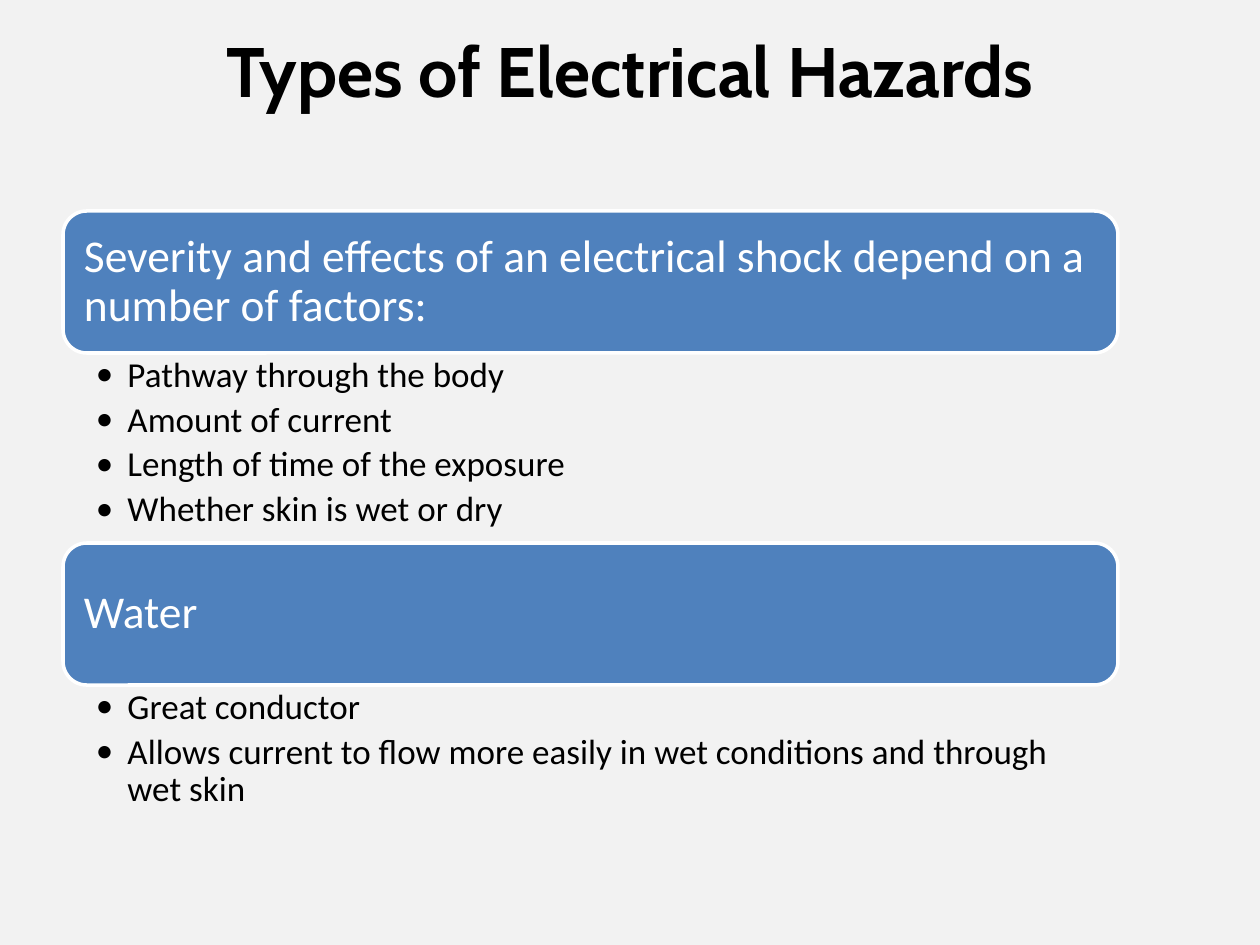
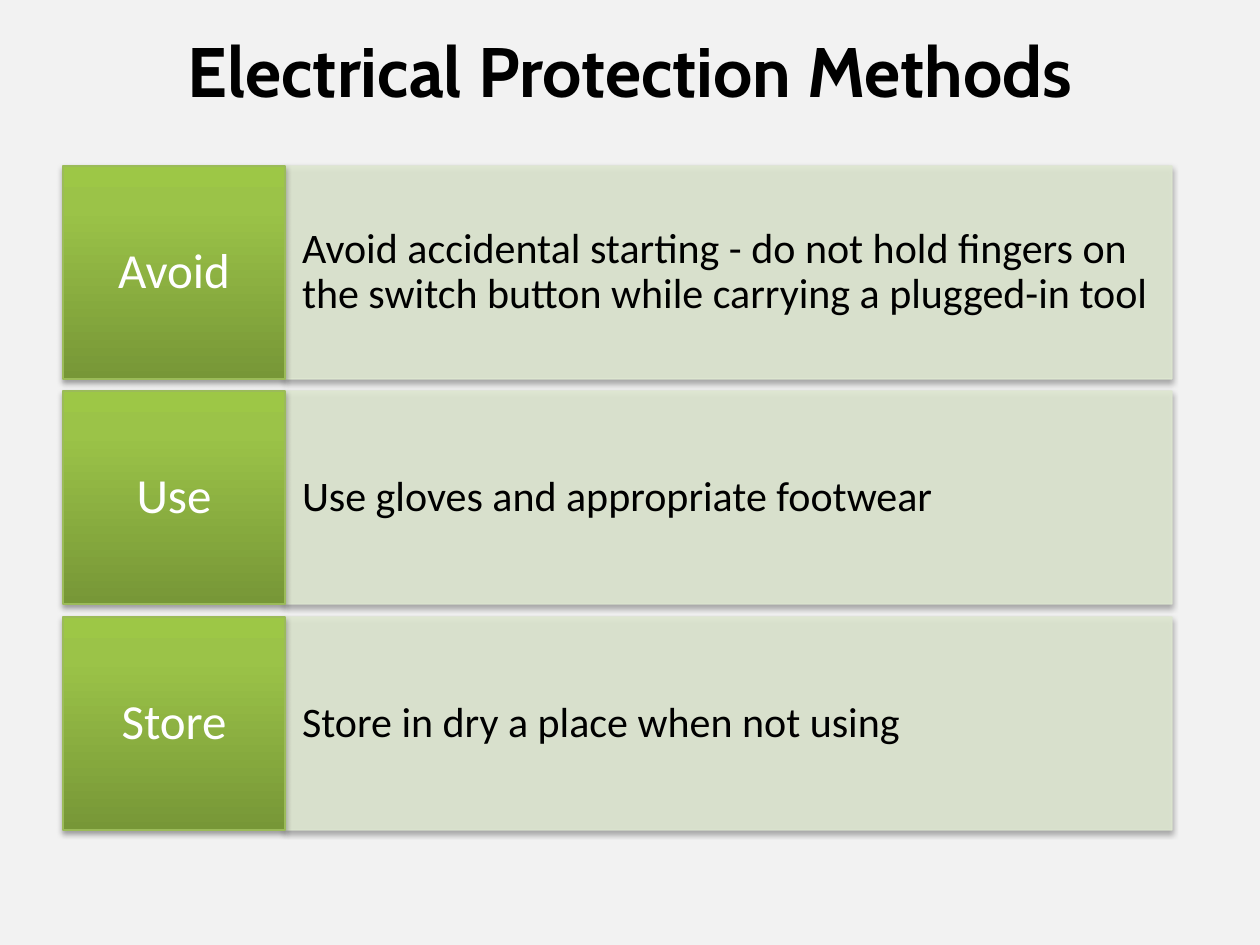
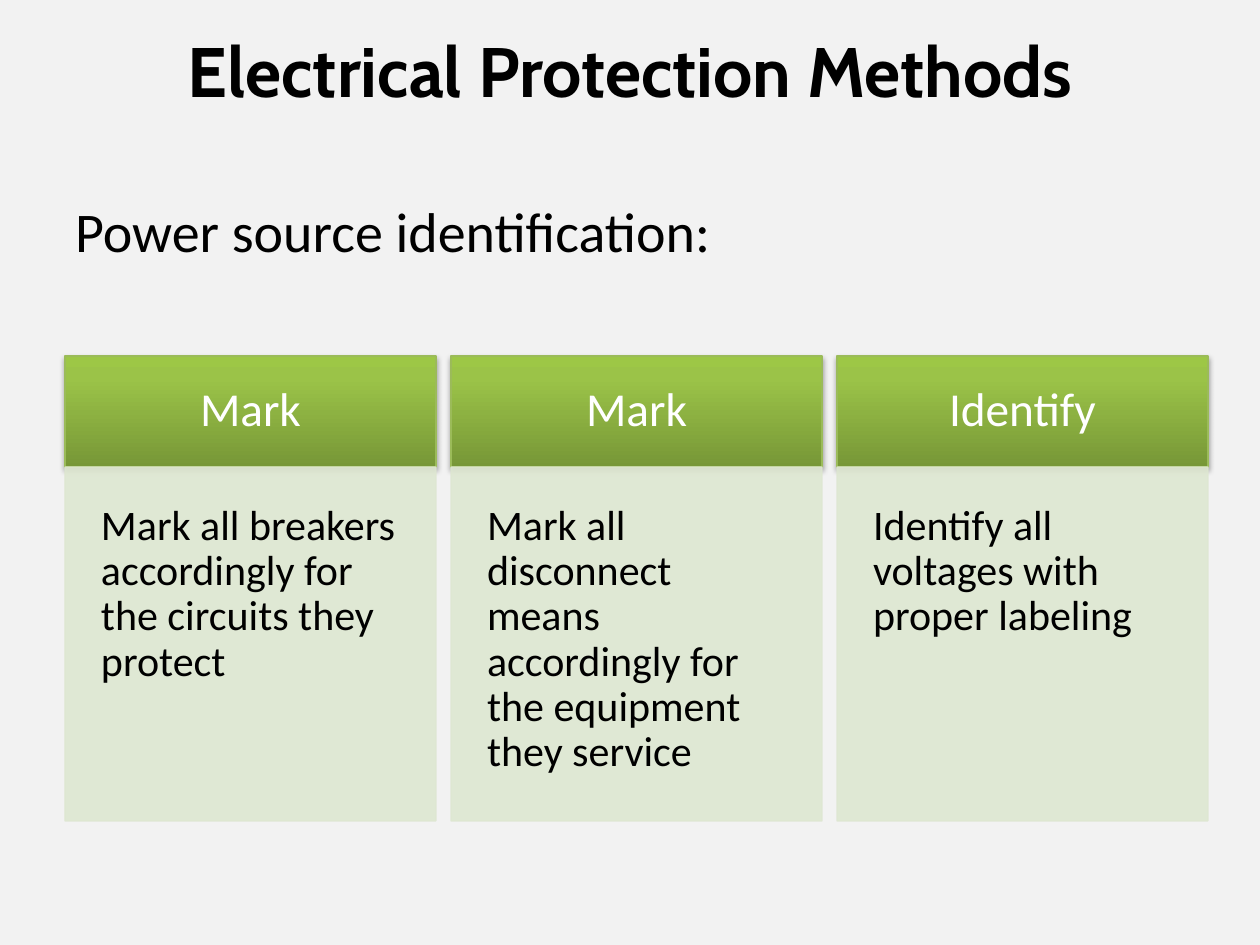
from copy import deepcopy

from lxml.etree import SubElement
from pptx import Presentation
from pptx.dml.color import RGBColor
from pptx.enum.shapes import MSO_SHAPE
from pptx.enum.text import MSO_ANCHOR, PP_ALIGN
from pptx.oxml.ns import qn
from pptx.util import Emu, Pt

PX = 914400 / 126
BLACK, WHITE, BACKGROUND = "000000", "FFFFFF", "F2F2F2"
BLUE, GREEN_EDGE, PALE_GREEN = "4F81BD", "9BBB59", "DEE7D1"
GREEN_STOPS = [(0, "779737"), (0.8, "9BC348"), (1, "9DC746")]
rgb = RGBColor.from_string


def add_block(slide, box, lines, size, color, inset=(12, 6, 12, 6), shape=None,
              align=PP_ALIGN.LEFT, anchor=MSO_ANCHOR.MIDDLE, spacing=0.9, bulleted=False):
    """Add text in a preset shape, or in a plain text box if shape is None."""
    place = [Emu(round(length * PX)) for length in box]
    if shape is None:
        block = slide.shapes.add_textbox(*place)
    else:
        block = slide.shapes.add_shape(shape, *place)
        block.shadow.inherit = False
    frame = block.text_frame
    frame.word_wrap = True
    frame.vertical_anchor = anchor
    frame.margin_left, frame.margin_top, frame.margin_right, frame.margin_bottom = [
        Emu(round(length * PX)) for length in inset]
    frame.text = "\n".join(lines)
    for paragraph in frame.paragraphs:
        paragraph.alignment = align
        paragraph.line_spacing = spacing
        paragraph.font.name = "Calibri"
        paragraph.font.size = Pt(size)
        paragraph.font.color.rgb = rgb(color)
        if bulleted:
            paragraph.space_after = Pt(4)
            properties = paragraph._p.get_or_add_pPr()
            properties.set("marL", "228600")
            properties.set("indent", "-228600")
            for tag, attribute, value in [("a:buFont", "typeface", "Calibri"),
                                          ("a:buChar", "char", "•")]:
                bullet = SubElement(properties, qn(tag))
                bullet.set(attribute, value)
                properties.insert_element_before(bullet, "a:tabLst", "a:defRPr", "a:extLst")
    return block


def paint_card(card, heading, shadow):
    """Give a card the green gradient of a heading or the pale tint of a body."""
    properties = card._element.spPr
    card.line.width = Pt(0.75)
    if heading:
        card.fill.gradient()
        card.fill.gradient_angle = 90
        stop_list = properties.find(".//" + qn("a:gsLst"))
        stop_list.append(deepcopy(stop_list[0]))
        for stop, (position, color) in zip(card.fill.gradient_stops, GREEN_STOPS):
            stop.position = position
            stop.color.rgb = rgb(color)
        card.line.color.rgb = rgb(GREEN_EDGE)
    else:
        card.fill.solid()
        card.fill.fore_color.rgb = rgb(PALE_GREEN)
        card.line.color.rgb = rgb(PALE_GREEN)
        for color in properties.findall(".//" + qn("a:srgbClr")):
            SubElement(color, qn("a:alpha")).set("val", "90000")
    if shadow:
        cast = SubElement(properties.find(qn("a:effectLst")), qn("a:outerShdw"),
                          blurRad="40000", dist="23000", dir="5400000", rotWithShape="0")
        black = SubElement(cast, qn("a:srgbClr"), val=BLACK)
        SubElement(black, qn("a:alpha"), val="35000")


prs = Presentation()
prs.slide_width, prs.slide_height = Emu(round(1260 * PX)), Emu(round(945 * PX))
background = prs.slide_master.background.fill
background.solid()
background.fore_color.rgb = rgb(BACKGROUND)

# Titles
slides = []
for heading in ["Types of Electrical Hazards", "Electrical Protection Methods",
                "Electrical Protection Methods"]:
    slide = prs.slides.add_slide(prs.slide_layouts[5])
    title = slide.shapes.title
    title.left, title.top, title.width, title.height = [
        Emu(round(length * PX)) for length in (63, 21, 1134, 158)]
    title.text_frame.text = heading
    title.text_frame.vertical_anchor = MSO_ANCHOR.TOP
    paragraph = title.text_frame.paragraphs[0]
    paragraph.alignment = PP_ALIGN.CENTER
    paragraph.font.name = "Cabin"
    paragraph.font.size = Pt(40)
    paragraph.font.bold = True
    paragraph.font.color.rgb = rgb(BLACK)
    slides.append(slide)
hazards, tool_safety, power_sources = slides

# Shock factors, each bar followed by its bullets
factors = [
    (211, 189, "Severity and effects of an electrical shock depend on a number of factors:",
     ["Pathway through the body", "Amount of current",
      "Length of time of the exposure", "Whether skin is wet or dry"]),
    (543, 134, "Water",
     ["Great conductor",
      "Allows current to flow more easily in wet conditions and through wet skin"]),
]
for top, list_height, topic, details in factors:
    bar = add_block(hazards, (63, top, 1055, 142), [topic], 26, WHITE, (14, 14, 14, 14),
                    MSO_SHAPE.ROUNDED_RECTANGLE)
    bar.fill.solid()
    bar.fill.fore_color.rgb = rgb(BLUE)
    bar.line.color.rgb = rgb(WHITE)
    bar.line.width = Pt(2)
    add_block(hazards, (63, top + 141, 1055, list_height), details, 20, BLACK,
              (33, 5, 25, 5), anchor=MSO_ANCHOR.TOP, bulleted=True)

# Rows of protection methods
methods = [
    ("Avoid", "Avoid accidental starting - do not hold fingers on the switch button "
              "while carrying a plugged-in tool"),
    ("Use", "Use gloves and appropriate footwear"),
    ("Store", "Store in dry a place when not using"),
]
for row, (verb, advice) in enumerate(methods):
    top = 166 + row * 451 // 2
    advice_card = add_block(tool_safety, (285, top, 887, 213), [advice], 24, BLACK,
                            (17, 54, 17, 54), MSO_SHAPE.RECTANGLE)
    paint_card(advice_card, heading=False, shadow=True)
    verb_card = add_block(tool_safety, (63, top, 222, 213), [verb], 28, WHITE,
                          (11, 21, 11, 21), MSO_SHAPE.RECTANGLE, align=PP_ALIGN.CENTER)
    paint_card(verb_card, heading=True, shadow=True)

# Columns of power source identification
labeling = [
    ("Mark", "Mark all breakers accordingly for the circuits they protect"),
    ("Mark", "Mark all disconnect means accordingly for the equipment they service"),
    ("Identify", "Identify all voltages with proper labeling"),
]
for column, (verb, advice) in enumerate(labeling):
    left = 65 + column * 386
    verb_card = add_block(power_sources, (left, 356, 371, 111), [verb], 27, WHITE,
                          (29, 29, 29, 29), MSO_SHAPE.RECTANGLE, align=PP_ALIGN.CENTER)
    paint_card(verb_card, heading=True, shadow=True)
    advice_card = add_block(power_sources, (left, 467, 371, 354), [advice], 24, BLACK,
                            (36, 37, 36, 37), MSO_SHAPE.RECTANGLE, anchor=MSO_ANCHOR.TOP)
    paint_card(advice_card, heading=False, shadow=False)
add_block(power_sources, (63, 190, 688, 81), ["Power source identification:"], 32, BLACK,
          anchor=MSO_ANCHOR.TOP, spacing=1)

prs.save("out.pptx")
